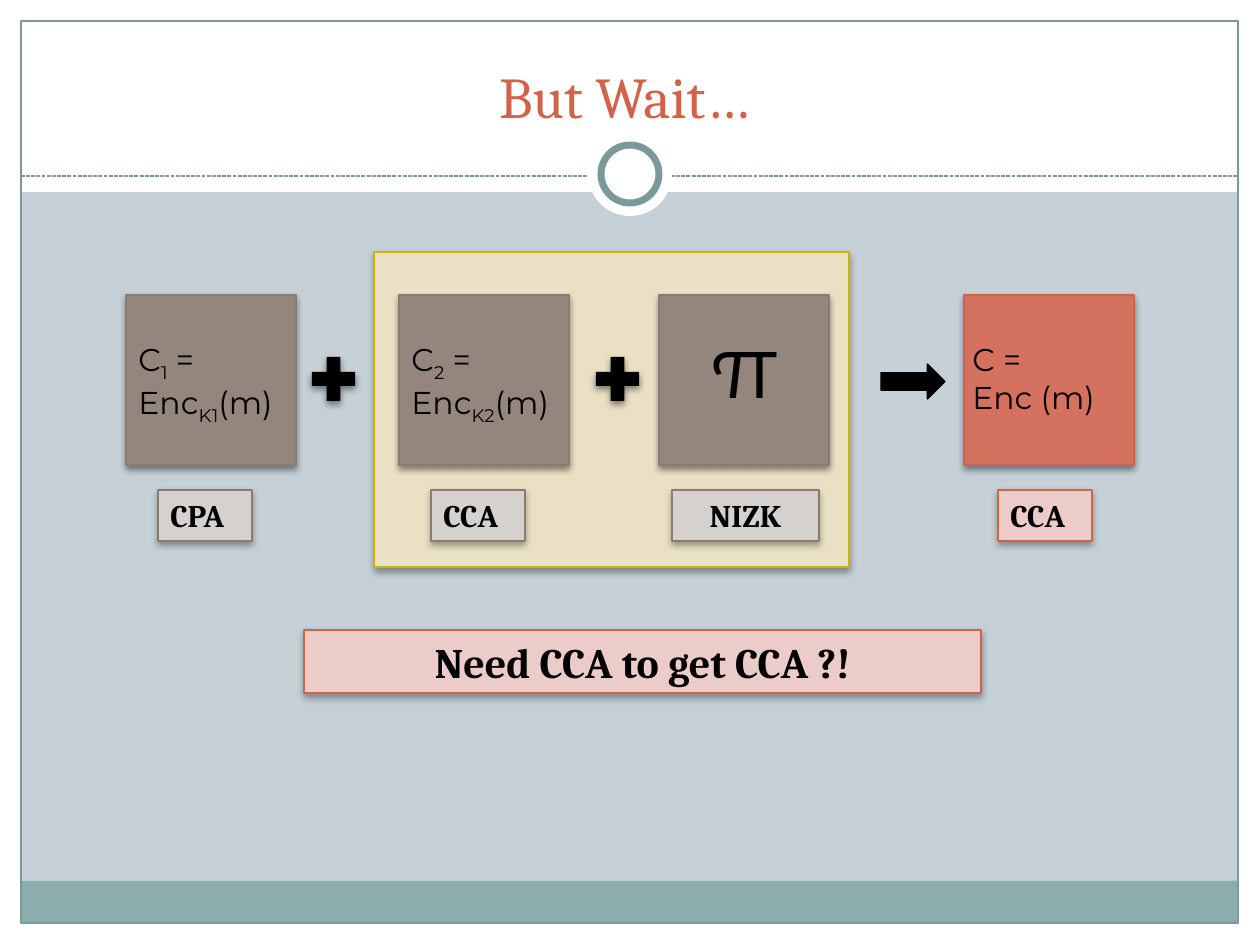
import pptx
import pptx.dml.color
import pptx.enum.dml
import pptx.enum.shapes
import pptx.enum.text
import pptx.oxml
import pptx.oxml.ns
import pptx.util

RGB = pptx.dml.color.RGBColor
SHAPE = pptx.enum.shapes.MSO_SHAPE
ALIGN = pptx.enum.text.PP_ALIGN
ANCHOR = pptx.enum.text.MSO_ANCHOR
PX = 914400 // 126

WHITE = RGB(0xFF, 0xFF, 0xFF)
BLACK = RGB(0x00, 0x00, 0x00)
BACKGROUND = RGB(0xC5, 0xD1, 0xD7)
TEAL = RGB(0x8C, 0xAD, 0xAE)
TEAL_LINE = RGB(0x7C, 0x99, 0x9A)
RED = RGB(0xD1, 0x63, 0x49)
RED_FILL = RGB(0xD4, 0x72, 0x5F)
RED_PALE = RGB(0xEC, 0xCC, 0xC9)
BROWN = RGB(0x8C, 0x7B, 0x70)
BROWN_FILL = RGB(0x95, 0x86, 0x7D)
BROWN_PALE = RGB(0xD5, 0xD1, 0xCF)
GOLD = RGB(0xCC, 0xB4, 0x00)
GOLD_PALE = RGB(0xEA, 0xE1, 0xC5)

deck = pptx.Presentation()
deck.slide_width = 1260 * PX
deck.slide_height = 945 * PX
slide = deck.slides.add_slide(deck.slide_layouts[6])
slide.background.fill.solid()
slide.background.fill.fore_color.rgb = BACKGROUND


def draw(kind, place, fill=None, line=None, width=0.75, shadow=0):
    """Add a preset shape at a px place; shadow is its opacity in percent."""
    shape = slide.shapes.add_shape(kind, *(n * PX for n in place))
    shape.shadow.inherit = False
    for paint, color in ((shape.fill, fill), (shape.line.fill, line)):
        if color is None:
            paint.background()
        else:
            paint.solid()
            paint.fore_color.rgb = color
    if line is not None:
        shape.line.width = pptx.util.Pt(width)
    if shadow:
        effects = shape._element.spPr.find(pptx.oxml.ns.qn("a:effectLst"))
        effects.append(pptx.oxml.parse_xml(
            f'<a:outerShdw {pptx.oxml.ns.nsdecls("a")} blurRad="50800" dist="25400" '
            'dir="5400000" rotWithShape="0"><a:srgbClr val="000000">'
            f'<a:alpha val="{shadow * 1000}"/></a:srgbClr></a:outerShdw>'))
    return shape


def write(shape, paragraphs, size, font, color=BLACK, bold=False,
          align=ALIGN.LEFT, anchor=ANCHOR.TOP):
    """Fill a shape with paragraphs of runs; a run starting with _ is a subscript."""
    frame = shape.text_frame
    frame.word_wrap = True
    frame.vertical_anchor = anchor
    for index, runs in enumerate(paragraphs):
        paragraph = frame.add_paragraph() if index else frame.paragraphs[0]
        paragraph.alignment = align
        for text in runs:
            run = paragraph.add_run()
            run.text = text.lstrip("_")
            run.font.size = pptx.util.Pt(size)
            run.font.name = font
            run.font.bold = bold
            run.font.color.rgb = color
            if text.startswith("_"):
                run.font._element.set("baseline", "-25000")


# Frame, header and footer
for margin in ((0, 924, 1260, 21), (0, 0, 1260, 192), (0, 0, 21, 945), (1239, 0, 21, 945)):
    draw(SHAPE.RECTANGLE, margin, WHITE)
draw(SHAPE.RECTANGLE, (21, 881, 1217, 43), TEAL)
draw(SHAPE.RECTANGLE, (21, 21, 1217, 902), line=TEAL_LINE)
divider = slide.shapes.add_connector(
    pptx.enum.shapes.MSO_CONNECTOR.STRAIGHT, 21 * PX, 176 * PX, 1239 * PX, 176 * PX)
divider.line.color.rgb = TEAL_LINE
divider.line.width = pptx.util.Pt(0.75)
divider.line.dash_style = pptx.enum.dml.MSO_LINE.SQUARE_DOT
divider._element.spPr.append(pptx.oxml.parse_xml(
    f'<a:effectLst {pptx.oxml.ns.nsdecls("a")}/>'))
draw(SHAPE.OVAL, (588, 132, 84, 84), WHITE)
draw(SHAPE.OVAL, (601, 145, 58, 58), WHITE, TEAL_LINE, 4)

title = slide.shapes.add_textbox(42 * PX, 31 * PX, 1176 * PX, 105 * PX)
write(title, [["But Wait… "]], 33, "Cambria", RED, align=ALIGN.CENTER, anchor=ANCHOR.BOTTOM)

conclusion = draw(SHAPE.RECTANGLE, (304, 630, 677, 63), RED_PALE, RED, shadow=35)
write(conclusion, [["Need CCA to get CCA ?!"]], 24, "Cambria", bold=True, align=ALIGN.CENTER)

# Building blocks of the scheme
draw(SHAPE.RECTANGLE, (374, 252, 475, 315), GOLD_PALE, GOLD, shadow=35)
for left, fill, line in ((126, BROWN_FILL, BROWN), (399, BROWN_FILL, BROWN),
                         (659, BROWN_FILL, BROWN), (964, RED_FILL, RED)):
    draw(SHAPE.RECTANGLE, (left, 295, 170, 170), fill, line, shadow=45)
draw(SHAPE.RIGHT_ARROW, (881, 364, 64, 35), BLACK, BLACK)
for left in (304, 588):
    draw(SHAPE.MATH_PLUS, (left, 349, 59, 60), BLACK, shadow=45)

formulas = (
    ((126, 334, 195, 90), [["C", "_1", " = Enc", "_K1", "(m)"]], 18),
    ((399, 334, 195, 90), [["C", "_2", " = Enc", "_K2", "(m)"]], 18),
    ((702, 305, 170, 118), [["π"]], 50),
    ((960, 334, 195, 90), [["C ="], ["Enc (m)"]], 18),
)
for place, paragraphs, size in formulas:
    formula = slide.shapes.add_textbox(*(n * PX for n in place))
    write(formula, paragraphs, size, "Montserrat")

security_labels = (
    ("CPA", 158, 94, BROWN_PALE, BROWN, ALIGN.LEFT),
    ("CCA", 431, 94, BROWN_PALE, BROWN, ALIGN.LEFT),
    ("CCA", 998, 94, RED_PALE, RED, ALIGN.LEFT),
    ("NIZK", 672, 147, BROWN_PALE, BROWN, ALIGN.CENTER),
)
for text, left, width, fill, line, align in security_labels:
    label = draw(SHAPE.RECTANGLE, (left, 490, width, 51), fill, line, shadow=35)
    write(label, [[text]], 18, "Cambria", bold=True, align=align)

deck.save("out.pptx")
